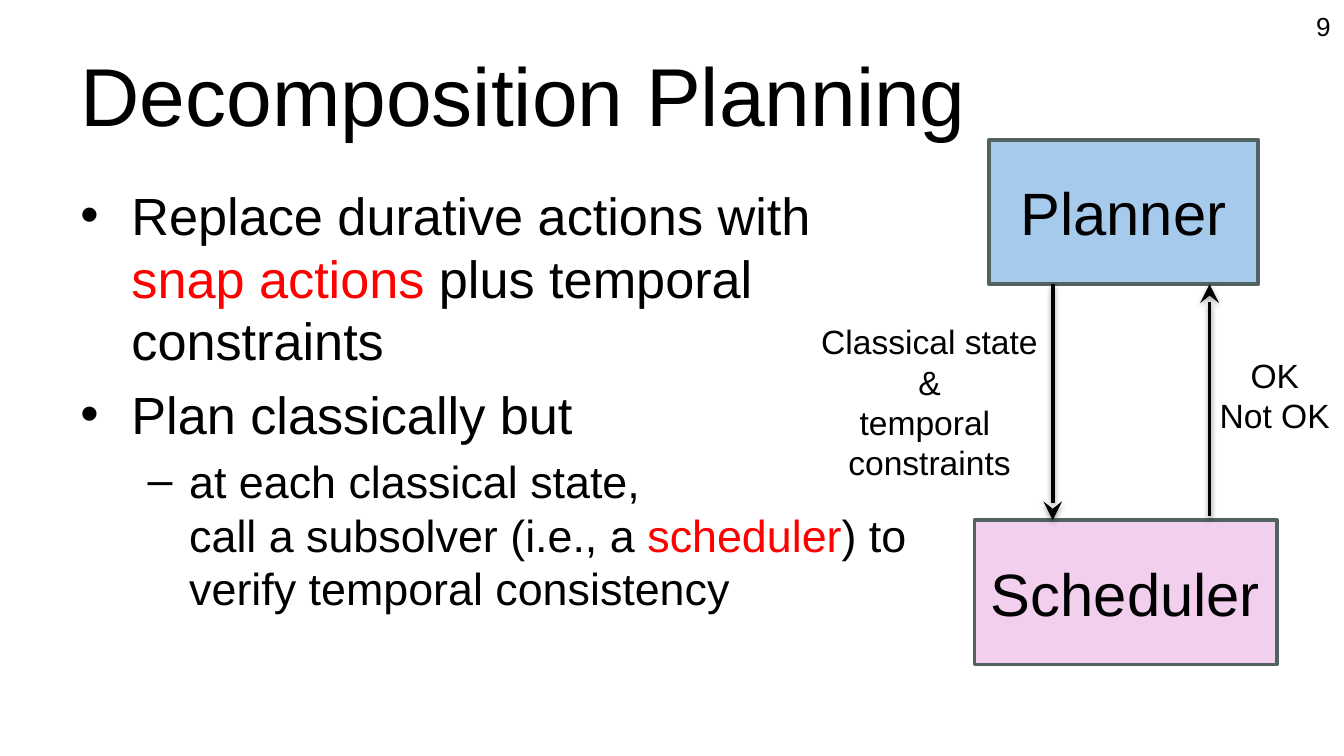
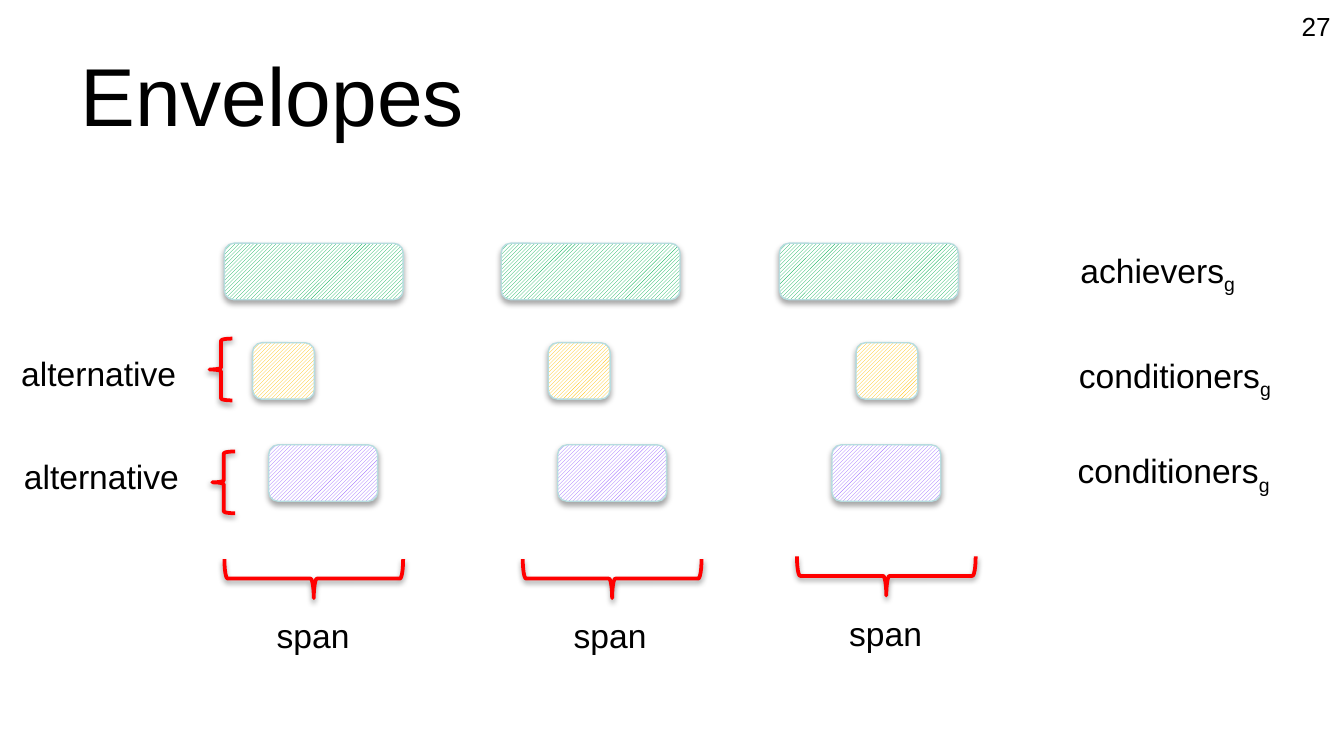
from lxml import etree
from pptx import Presentation
from pptx.dml.color import RGBColor
from pptx.enum.dml import MSO_PATTERN
from pptx.enum.shapes import MSO_CONNECTOR, MSO_SHAPE
from pptx.enum.text import MSO_ANCHOR, MSO_AUTO_SIZE, PP_ALIGN
from pptx.oxml.ns import qn
from pptx.util import Inches, Pt

LEFT, CENTER, RIGHT = PP_ALIGN.LEFT, PP_ALIGN.CENTER, PP_ALIGN.RIGHT
TOP, MIDDLE = MSO_ANCHOR.TOP, MSO_ANCHOR.MIDDLE
BOX, ROUNDED, BRACE = MSO_SHAPE.RECTANGLE, MSO_SHAPE.ROUNDED_RECTANGLE, MSO_SHAPE.LEFT_BRACE
STRAIGHT = MSO_CONNECTOR.STRAIGHT
HATCH = MSO_PATTERN.DARK_UPWARD_DIAGONAL

FONT = "Arial"
COLORS = {
    "text": "000000", "accent": "FF0000", "paper": "FFFFFF",
    "planner": "A5CAEC", "scheduler": "F3CFEE", "box_line": "526263",
    "achiever": "00B050", "first_conditioner": "FFC000",
    "second_conditioner": "9966FF", "bar_line": "B6DCDF",
}
COLORS = {name: RGBColor.from_string(value) for name, value in COLORS.items()}

# The slide is 16:9, on a grid 100 columns wide, of square cells.
WIDTH = Inches(10)
HEIGHT = WIDTH * 9 // 16
CELL = WIDTH // 100

FRAME = {"word_wrap": True, "vertical_anchor": MIDDLE}
HEADER = FRAME | {"margin_top": CELL, "margin_bottom": CELL}
BODY = FRAME | {"vertical_anchor": TOP}
LABEL = {"word_wrap": False, "vertical_anchor": TOP,
         "auto_size": MSO_AUTO_SIZE.SHAPE_TO_FIT_TEXT}


def add_text(shapes, cells, paragraphs, size, align=LEFT, frame_format=LABEL, shape=None):
    """Write paragraphs of (text, style) runs in a shape, or in a new box at the cells."""
    if shape is None:
        shape = shapes.add_textbox(*(int(cell * CELL) for cell in cells))
    frame = shape.text_frame
    for attribute, value in frame_format.items():
        setattr(frame, attribute, value)
    for index, runs in enumerate(paragraphs):
        paragraph = frame.add_paragraph() if index else frame.paragraphs[0]
        paragraph.alignment = align
        for text, style in runs:
            for line_number, line in enumerate(text.split("\n")):
                if line_number:
                    paragraph.add_line_break()
                if not line:
                    continue
                run = paragraph.add_run()
                run.text = line
                run.font.name, run.font.size = FONT, Pt(size)
                run.font.color.rgb = COLORS["accent" if style == "accent" else "text"]
                if style == "subscript":
                    run.font._element.set("baseline", "-25000")
    return frame


def finish(shape, line_color, line_width, opacity=0, distance=1.6):
    """Set the outline, then a soft shadow below, or none when opacity is 0."""
    shape.line.color.rgb = COLORS[line_color]
    shape.line.width = Pt(line_width)
    effects = etree.SubElement(shape._element.spPr, qn("a:effectLst"))
    if opacity:
        shadow = etree.SubElement(effects, qn("a:outerShdw"), blurRad=str(Pt(3.1)),
                                  dist=str(Pt(distance)), dir="5400000", rotWithShape="0")
        color = etree.SubElement(shadow, qn("a:srgbClr"), val=str(COLORS["text"]))
        etree.SubElement(color, qn("a:alpha"), val=str(opacity * 1000))


presentation = Presentation()
presentation.slide_width, presentation.slide_height = WIDTH, HEIGHT

canvases = []
for title, number in (("Decomposition Planning", "9"), ("Envelopes", "27")):
    shapes = presentation.slides.add_slide(presentation.slide_layouts[6]).shapes
    add_text(shapes, (5, 2.3, 90, 9.4), [[(title, "plain")]], 44, LEFT, HEADER)
    add_text(shapes, (93.3, 0, 6.7, 3.9), [[(number, "plain")]], 14, RIGHT, HEADER)
    canvases.append(shapes)
planning, envelopes = canvases

# Decomposition planning: bulleted text
body = add_text(planning, (5, 13.13, 93.3, 37.1), [
    [("Replace durative actions with \n", "plain"), ("snap actions", "accent"),
     (" plus temporal \nconstraints", "plain")],
    [("Plan classically but", "plain")],
    [("at each classical state, \ncall a subsolver (i.e., a ", "plain"),
     ("scheduler", "accent"), (") to\nverify temporal consistency", "plain")],
], 28, LEFT, BODY)
body.paragraphs[2].level = 1

BULLETS = (("•", 0.38, 0.38, 28), ("–", 0.81, 0.31, 24))
for index, paragraph in enumerate(body.paragraphs):
    bullet, margin, hanging, size = BULLETS[paragraph.level]
    properties = paragraph._p.get_or_add_pPr()
    properties.set("marL", str(Inches(margin)))
    properties.set("indent", str(-Inches(hanging)))
    if index:
        space = etree.SubElement(properties, qn("a:spcBef"))
        etree.SubElement(space, qn("a:spcPct"), val="20000")
    etree.SubElement(properties, qn("a:buFont"), typeface=FONT)
    etree.SubElement(properties, qn("a:buChar"), char=bullet)
    for run in paragraph.runs:
        run.font.size = Pt(size)

# Planner and scheduler, with the messages between them
for name, fill, cells in (("Planner", "planner", (73.6, 10.4, 20, 10.75)),
                          ("Scheduler", "scheduler", (72.5, 38.7, 22.5, 10.75))):
    solver = planning.add_shape(BOX, *(int(cell * CELL) for cell in cells))
    solver.fill.solid()
    solver.fill.fore_color.rgb = COLORS[fill]
    finish(solver, "box_line", 2)
    add_text(planning, None, [[(name, "plain")]], 32, CENTER, FRAME, solver)

for column, start, end in ((78.33, 21.15, 38.7), (90, 38.4, 21.15)):
    x = int(column * CELL)
    arrow = planning.add_connector(STRAIGHT, x, int(start * CELL), x, int(end * CELL))
    finish(arrow, "text", 2, opacity=38)
    etree.SubElement(arrow.line._get_or_add_ln(), qn("a:tailEnd"),
                     type="stealth", w="lg", len="lg")

for cells, lines in (((60, 23.4, 18.33, 13.1), ("Classical state\n&\ntemporal ", "constraints")),
                     ((89.7, 25.9, 10.3, 7.1), ("OK", "Not OK"))):
    add_text(planning, cells, [[(line, "plain")] for line in lines], 18, CENTER)

# Envelopes: one row of hatched bars per set of actions
BAR_HEIGHT = 4.2
for color, row, bar_width, columns, label, label_cells in (
    ("achiever", 18.1, 13.3, (16.7, 37.3, 58), "achievers", (79.4, 18.1, 14.2, 4)),
    ("first_conditioner", 25.5, 4.6, (18.8, 40.8, 63.7), "conditioners", (79.3, 25.9, 16.6, 4)),
    ("second_conditioner", 33.1, 8.1, (20, 41.5, 61.9), "conditioners", (79.2, 33, 16.6, 4)),
):
    for column in columns:
        bar = envelopes.add_shape(ROUNDED, *(int(cell * CELL) for cell in
                                             (column, row, bar_width, BAR_HEIGHT)))
        bar.fill.patterned()
        bar.fill.pattern = HATCH
        bar.fill.fore_color.rgb = COLORS[color]
        bar.fill.back_color.rgb = COLORS["paper"]
        finish(bar, "bar_line", 0.75, opacity=35, distance=1.8)
    add_text(envelopes, label_cells, [[(label, "plain"), ("g", "subscript")]], 18)

# Braces, each grouped with its label
ALTERNATIVE = ("alternative", 0, (1.7, 4.6), (13.7, 4))
SPAN = ("span", 270, (2.9, 13.3), (7.5, 4))
for (label, rotation, brace_size, label_size), brace_at, label_at in (
    (ALTERNATIVE, (15.6, 25.2), (0.6, 25.8)),
    (ALTERNATIVE, (15.8, 33.6), (0.8, 33.4)),
    (SPAN, (21.9, 36.4), (19.6, 45.3)),
    (SPAN, (44.1, 36.4), (41.7, 45.3)),
    (SPAN, (64.5, 36.2), (62.2, 45.1)),
):
    group = envelopes.add_group_shape().shapes
    brace = group.add_shape(BRACE, *(int(cell * CELL) for cell in brace_at + brace_size))
    brace.rotation = rotation
    brace.fill.background()
    finish(brace, "accent", 2, opacity=38)
    add_text(group, label_at + label_size, [[(label, "plain")]], 18)

presentation.save("out.pptx")
